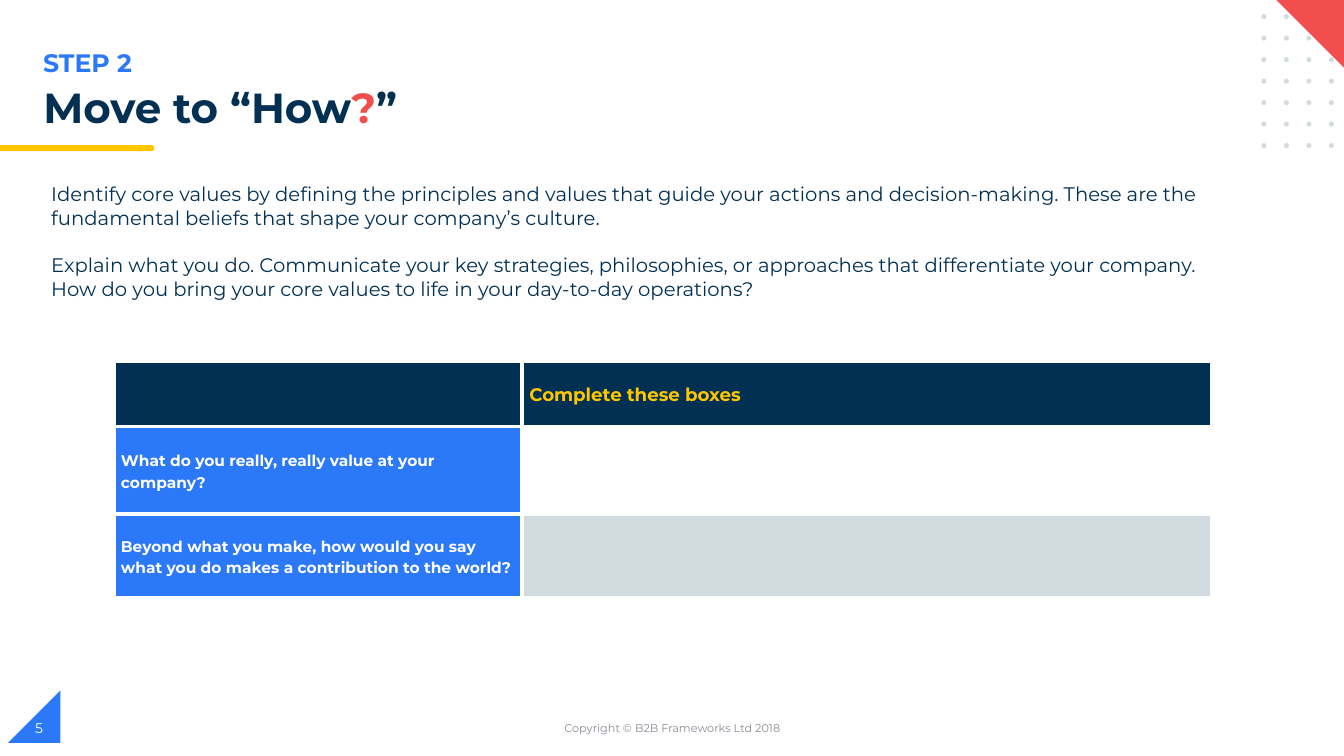
from itertools import product
from typing import NamedTuple

from lxml.etree import SubElement
from pptx import Presentation
from pptx.dml.color import RGBColor
from pptx.enum.shapes import MSO_SHAPE as Preset
from pptx.enum.text import MSO_ANCHOR as Anchor, MSO_AUTO_SIZE as AutoSize, PP_ALIGN as Align
from pptx.oxml.ns import qn
from pptx.util import Inches, Pt

FONT = "Montserrat"
NAVY = RGBColor(0x02, 0x30, 0x53)
BLUE = RGBColor(0x2B, 0x79, 0xF8)
RED = RGBColor(0xF2, 0x4E, 0x4E)
YELLOW = RGBColor(0xFF, 0xC6, 0x00)
PALE = RGBColor(0xD1, 0xDB, 0xE0)
GREY = RGBColor(0x88, 0x8C, 0x97)
WHITE = RGBColor(0xFF, 0xFF, 0xFF)


class Box(NamedTuple):
    left: float
    top: float
    width: float
    height: float

    def lengths(self) -> list:
        return [Inches(value) for value in self]


class Decoration(NamedTuple):
    preset: Preset
    box: Box
    color: RGBColor
    rotation: int = 0


class Label(NamedTuple):
    paragraphs: list[str]
    box: Box
    size: int
    color: RGBColor
    bold: bool = False
    anchor: Anchor = Anchor.TOP
    align: Align = Align.LEFT
    gap: int = 0


class CellStyle(NamedTuple):
    text: str
    fill: RGBColor
    size: int = 11
    color: RGBColor = WHITE


DOT_ROWS, DOT_COLUMNS = 7, 4
DOTS = [
    Decoration(Preset.OVAL, Box(12.51 + 0.67 * column / 3, 0.14 + 1.28 * row / 6, 0.05, 0.05), PALE)
    for row, column in product(range(DOT_ROWS), range(DOT_COLUMNS))
]
DECORATIONS = [
    Decoration(Preset.RIGHT_TRIANGLE, Box(0.08, 6.85, 0.52, 0.52), BLUE, 270),
    Decoration(Preset.FLOWCHART_TERMINATOR, Box(1.34, 1.44, 0.19, 0.06), YELLOW),
    Decoration(Preset.RECTANGLE, Box(0, 1.44, 1.41, 0.06), YELLOW),
    *DOTS,
    Decoration(Preset.RIGHT_TRIANGLE, Box(12.65, -0.01, 0.72, 0.72), RED, 180),
]

LABELS = [
    Label(["STEP 2"], Box(0.33, 0.42, 6.69, 0.4), 18, BLUE, bold=True),
    Label(["Copyright © B2B Frameworks Ltd 2018"], Box(4.42, 7.02, 4.5, 0.4), 8, GREY,
          anchor=Anchor.MIDDLE, align=Align.CENTER),
    Label(["5"], Box(0.25, 7.02, 3, 0.4), 10, WHITE, anchor=Anchor.MIDDLE),
    Label([
        "Identify core values by defining the principles and values that guide your actions "
        "and decision-making. These are the fundamental beliefs that shape your company’s culture.",
        "Explain what you do. Communicate your key strategies, philosophies, or approaches that "
        "differentiate your company. How do you bring your core values to life in your "
        "day-to-day operations?",
    ], Box(0.41, 1.76, 11.61, 1.28), 14, NAVY, gap=17),
]

TITLE_BOX = Box(0.33, 0.82, 11.15, 0.56)
TITLE_RUNS = [("Move to “How", NAVY), ("?", RED), ("”", NAVY)]

COLUMN_WIDTHS = [4.05, 6.84]
ROW_HEIGHTS = [0.65, 0.87, 0.83]
TABLE_BOX = Box(1.13, 3.58, sum(COLUMN_WIDTHS), sum(ROW_HEIGHTS))
CELLS = [
    [CellStyle("", NAVY), CellStyle("Complete these boxes", NAVY, 13, YELLOW)],
    [CellStyle("What do you really, really value at your company?", BLUE), CellStyle("", WHITE)],
    [CellStyle("Beyond what you make, how would you say what you do makes a contribution "
               "to the world?", BLUE), CellStyle("", PALE)],
]


def set_font(font, size: int, color: RGBColor, bold: bool) -> None:
    font.name = FONT
    font.size = Pt(size)
    font.bold = bold
    font.color.rgb = color


def add_decoration(slide, decoration: Decoration) -> None:
    shape = slide.shapes.add_shape(decoration.preset, *decoration.box.lengths())
    shape.shadow.inherit = False
    shape.rotation = decoration.rotation
    shape.fill.solid()
    shape.fill.fore_color.rgb = decoration.color
    shape.line.fill.background()


def add_label(slide, label: Label) -> None:
    frame = slide.shapes.add_textbox(*label.box.lengths()).text_frame
    frame.word_wrap = True
    frame.vertical_anchor = label.anchor
    for index, text in enumerate(label.paragraphs):
        paragraph = frame.add_paragraph() if index else frame.paragraphs[0]
        paragraph.text = text
        paragraph.alignment = label.align
        if index:
            paragraph.space_before = Pt(label.gap)
        set_font(paragraph.font, label.size, label.color, label.bold)


def fill_title(title) -> None:
    title.left, title.top, title.width, title.height = TITLE_BOX.lengths()
    frame = title.text_frame
    frame.auto_size = AutoSize.NONE
    frame.vertical_anchor = Anchor.TOP
    paragraph = frame.paragraphs[0]
    paragraph.alignment = Align.LEFT
    paragraph.line_spacing = 0.9
    for text, color in TITLE_RUNS:
        run = paragraph.add_run()
        run.text = text
        set_font(run.font, 30, color, True)


def add_borders(cell) -> None:
    properties = cell._tc.get_or_add_tcPr()
    for side in ("lnL", "lnR", "lnT", "lnB"):
        line = SubElement(properties, qn(f"a:{side}"), w=str(Pt(3)))
        fill = SubElement(line, qn("a:solidFill"))
        SubElement(fill, qn("a:srgbClr"), val=str(WHITE))


def format_cell(cell, style: CellStyle) -> None:
    add_borders(cell)
    cell.fill.solid()
    cell.fill.fore_color.rgb = style.fill
    cell.vertical_anchor = Anchor.MIDDLE
    cell.margin_left = cell.margin_right = Inches(0.07)
    cell.margin_top = cell.margin_bottom = 0
    cell.text = style.text
    paragraph = cell.text_frame.paragraphs[0]
    paragraph.line_spacing = 1.15
    set_font(paragraph.font, style.size, style.color, True)


def add_questions(slide) -> None:
    table = slide.shapes.add_table(len(ROW_HEIGHTS), len(COLUMN_WIDTHS), *TABLE_BOX.lengths()).table
    for column, width in zip(table.columns, COLUMN_WIDTHS):
        column.width = Inches(width)
    for row, height, styles in zip(table.rows, ROW_HEIGHTS, CELLS):
        row.height = Inches(height)
        for cell, style in zip(row.cells, styles):
            format_cell(cell, style)


def main() -> None:
    presentation = Presentation()
    presentation.slide_width = Inches(13.33)
    presentation.slide_height = Inches(7.5)
    slide = presentation.slides.add_slide(presentation.slide_layouts[5])

    # Corner triangles, title underline and dot grid
    for decoration in DECORATIONS:
        add_decoration(slide, decoration)

    # Title, text and footer
    fill_title(slide.shapes.title)
    for label in LABELS:
        add_label(slide, label)

    # Worksheet table
    add_questions(slide)

    presentation.save("out.pptx")


if __name__ == "__main__":
    main()
